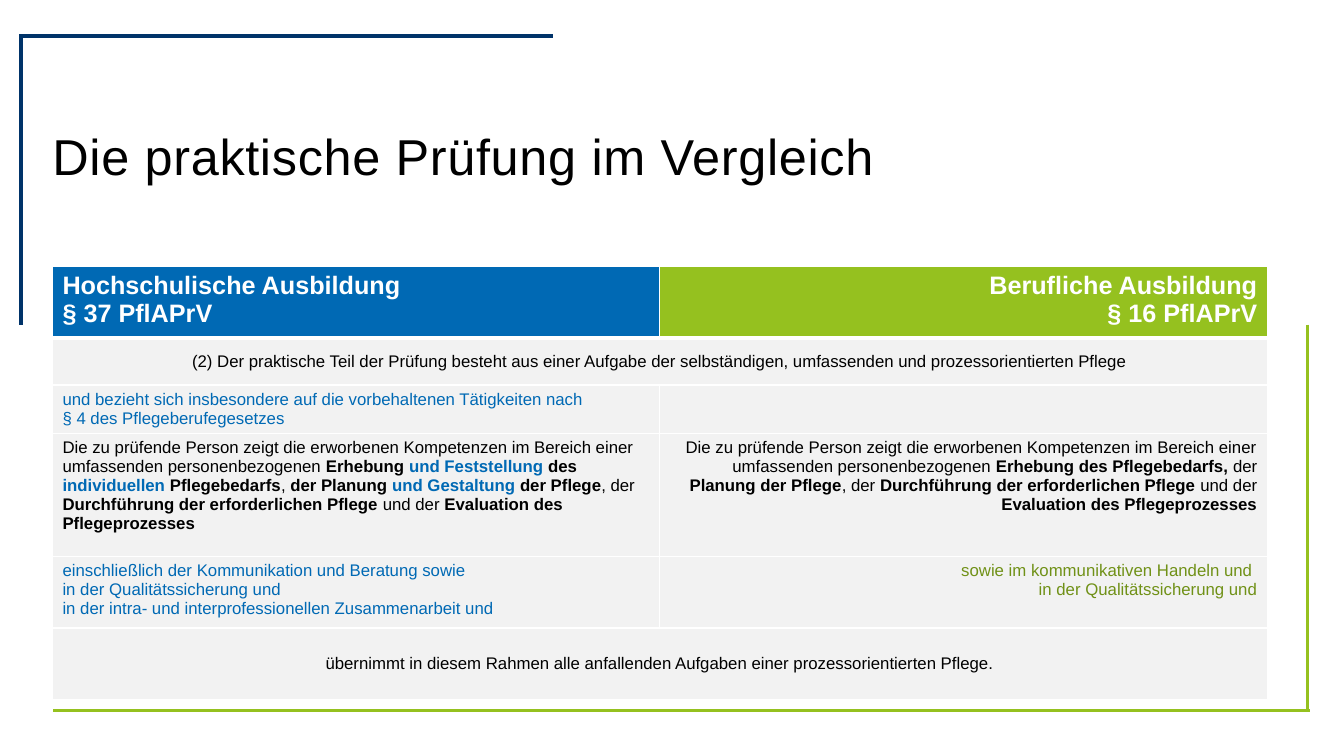
"""Build a slide that compares two practical nursing examinations."""
import pptx
import pptx.dml.color
import pptx.enum.text
import pptx.oxml.ns
import pptx.util
from lxml import etree

Inches = pptx.util.Inches
Pt = pptx.util.Pt
ALIGN = pptx.enum.text.PP_ALIGN
ANCHOR = pptx.enum.text.MSO_ANCHOR
qn = pptx.oxml.ns.qn

FONT = "Arial"
HUES = {"navy": "003369", "blue": "0069B4", "green": "95C11F", "moss": "709117",
        "grey": "F2F2F2", "white": "FFFFFF", "black": "000000"}
HEIGHTS = [0.71, 0.47, 0.47, 1.22, 0.71, 0.71]

LEAD = ("Die zu prüfende Person zeigt die erworbenen Kompetenzen im Bereich einer "
        "umfassenden personenbezogenen ")
STUDY = [
    (LEAD, "black", False), ("Erhebung ", "black", True),
    ("und Feststellung ", "blue", True), ("des ", "black", True),
    ("individuellen", "blue", True), (" Pflegebedarfs", "black", True),
    (", ", "black", False), ("der Planung ", "black", True),
    ("und Gestaltung ", "blue", True), ("der Pflege", "black", True),
    (", der ", "black", False),
    ("Durchführung der erforderlichen Pflege ", "black", True),
    ("und der ", "black", False), ("Evaluation des Pflegeprozesses", "black", True)]
TRADE = [
    (LEAD, "black", False), ("Erhebung des Pflegebedarfs,", "black", True),
    (" der ", "black", False), ("Planung der Pflege", "black", True),
    (", der ", "black", False),
    ("Durchführung der erforderlichen Pflege", "black", True),
    (" und der ", "black", False), ("Evaluation des Pflegeprozesses", "black", True)]


def plain(hue, *lines, bold=False):
    """Return one single-run paragraph per line."""
    return [[(line, hue, bold)] for line in lines]


ROWS = [
    [plain("white", "Hochschulische Ausbildung", "§ 37 PflAPrV", bold=True),
     plain("white", "Berufliche Ausbildung", "§ 16 PflAPrV", bold=True)],
    [plain("black", "(2) Der praktische Teil der Prüfung besteht aus einer Aufgabe der "
           "selbständigen, umfassenden und prozessorientierten Pflege")],
    [plain("blue", "und bezieht sich insbesondere auf die vorbehaltenen Tätigkeiten nach \n"
           "§ 4 des Pflegeberufegesetzes"), []],
    [[STUDY], [TRADE]],
    [plain("blue", "einschließlich der Kommunikation und Beratung sowie",
           "in der Qualitätssicherung und",
           "in der intra- und interprofessionellen Zusammenarbeit und"),
     plain("moss", "sowie im kommunikativen Handeln und ",
           "in der Qualitätssicherung und")],
    [plain("black", "übernimmt in diesem Rahmen alle anfallenden Aufgaben einer "
           "prozessorientierten Pflege.")],
]


def tint(name):
    """Return the named colour."""
    return pptx.dml.color.RGBColor.from_string(HUES[name])


def write(frame, paras, size, align):
    """Fill a text frame with paragraphs of (text, hue, bold) runs."""
    for i, runs in enumerate(paras):
        para = frame.add_paragraph() if i else frame.paragraphs[0]
        para.alignment = align
        para.font.name = FONT
        para.font.size = Pt(size)
        for text, hue, bold in runs:
            for j, part in enumerate(text.split("\n")):
                if j:
                    para.add_line_break()
                run = para.add_run()
                run.text = part
                run.font.color.rgb = tint(hue)
                run.font.bold = bold


def rule(cell, hue, widths):
    """Draw the left, right, top and bottom borders; zero means none."""
    props = cell._tc.get_or_add_tcPr()
    for side, width in zip("LRTB", widths):
        line = etree.SubElement(props, qn("a:ln" + side), w=str(Pt(width)))
        if width:
            fill = etree.SubElement(line, qn("a:solidFill"))
            etree.SubElement(fill, qn("a:srgbClr"), val=HUES[hue])
        else:
            etree.SubElement(line, qn("a:noFill"))


def add_grid(slide, box, wides, talls):
    """Add an unbanded table with the given column widths and row heights."""
    table = slide.shapes.add_table(len(talls), len(wides), *map(Inches, box)).table
    table.first_row = table.horz_banding = False
    for col, wide in zip(table.columns, wides):
        col.width = Inches(wide)
    for row, tall in zip(table.rows, talls):
        row.height = Inches(tall)
    return table


def draw_frame(slide, left, top, width, height):
    """Draw the two corner brackets as borders of a table."""
    wides = [0.32, 4.96, width - 5.28]
    table = add_grid(slide, (left, top, width, height), wides, [2.86, height - 2.86])
    edges = {(0, 0): ("navy", (3, 0, 3, 0)), (0, 1): ("navy", (0, 0, 3, 0)),
             (1, 1): ("green", (0, 3, 0, 3)), (1, 2): ("green", (0, 3, 0, 3))}
    for r in range(2):
        for c in range(3):
            cell = table.cell(r, c)
            rule(cell, *edges.get((r, c), ("white", (0, 0, 0, 0))))
            cell.fill.background()
        table.cell(r, r).merge(table.cell(r, r + 1))


def draw_title(slide, left, top, width, height):
    """Place the slide title in the box."""
    box = slide.shapes.add_textbox(*map(Inches, (left, top, width, height)))
    frame = box.text_frame
    frame.word_wrap = True
    frame.margin_left = frame.margin_right = frame.margin_top = frame.margin_bottom = 0
    write(frame, plain("black", "Die praktische Prüfung im Vergleich"), 36, ALIGN.LEFT)
    para = frame.paragraphs[0]
    para.line_spacing = 0.9
    para.runs[0]._r.get_or_add_rPr().set("spc", "50")


def draw_table(slide, left, top, width, height):
    """Place the comparison table in the box."""
    table = add_grid(slide, (left, top, width, height), [width / 2] * 2, HEIGHTS)
    for r, row in enumerate(ROWS):
        for c, hue in enumerate(("blue", "green")):
            cell = table.cell(r, c)
            rule(cell, "white", (1, 1, 3 if r == 1 else 1, 1 if r else 3))
            cell.fill.solid()
            cell.fill.fore_color.rgb = tint("grey" if r else hue)
            if r == 2:
                cell.margin_bottom = Inches(0.03)
        if len(row) == 1:
            table.cell(r, 0).merge(table.cell(r, 1))
            table.cell(r, 0).vertical_anchor = ANCHOR.MIDDLE
        sides = [ALIGN.CENTER] if len(row) == 1 else [ALIGN.LEFT, ALIGN.RIGHT]
        for c, (paras, align) in enumerate(zip(row, sides)):
            write(table.cell(r, c).text_frame, paras, 12 if r else 18, align)


def main():
    """Build and save the slide."""
    deck = pptx.Presentation()
    deck.slide_width, deck.slide_height = Inches(13.33), Inches(7.5)
    slide = deck.slides.add_slide(deck.slide_layouts[6])
    draw_frame(slide, 0.21, 0.36, 12.76, 6.69)
    draw_title(slide, 0.52, 1.31, 12.13, 0.65)
    draw_table(slide, 0.52, 2.64, 12.05, sum(HEIGHTS))
    deck.save("out.pptx")


if __name__ == "__main__":
    main()
